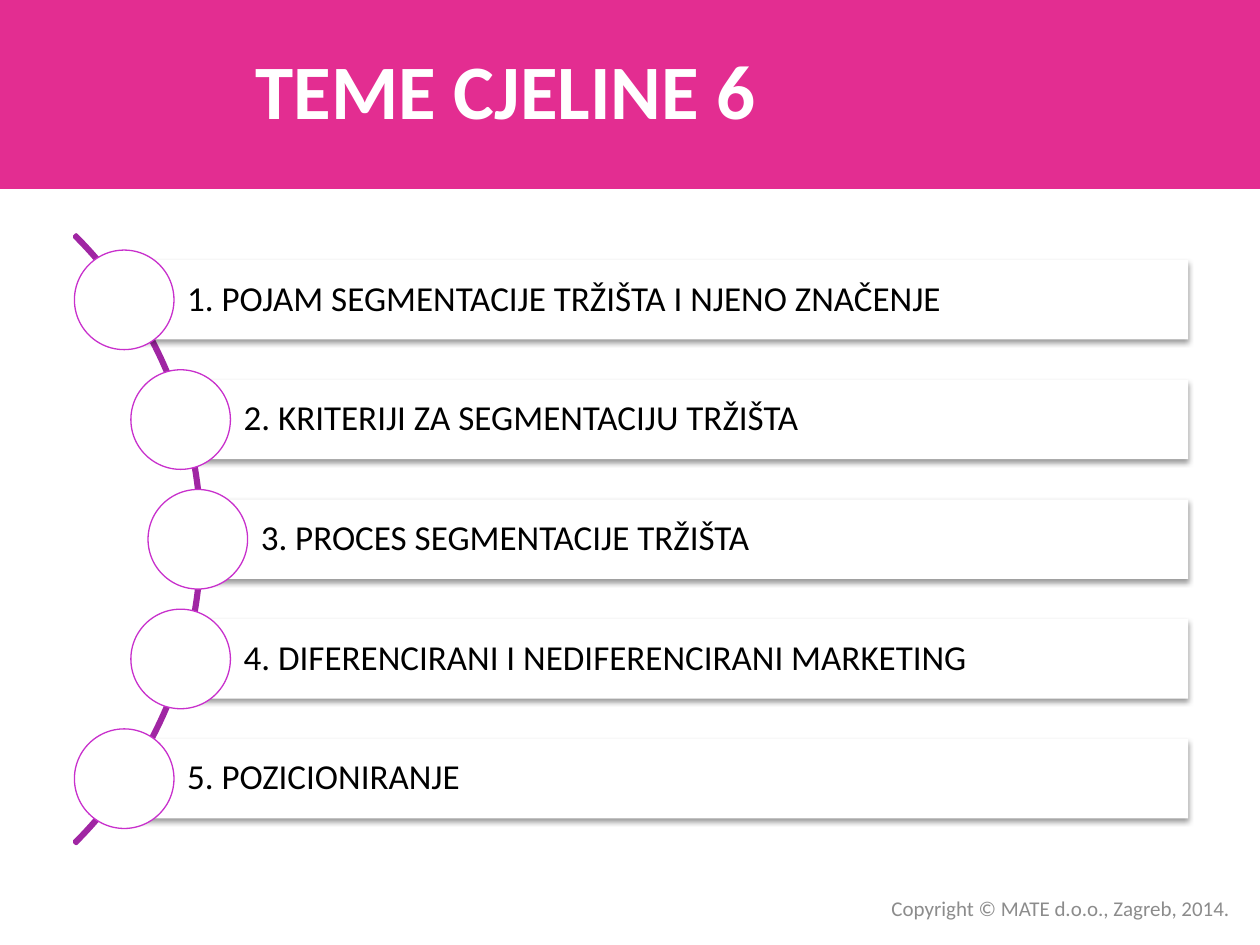
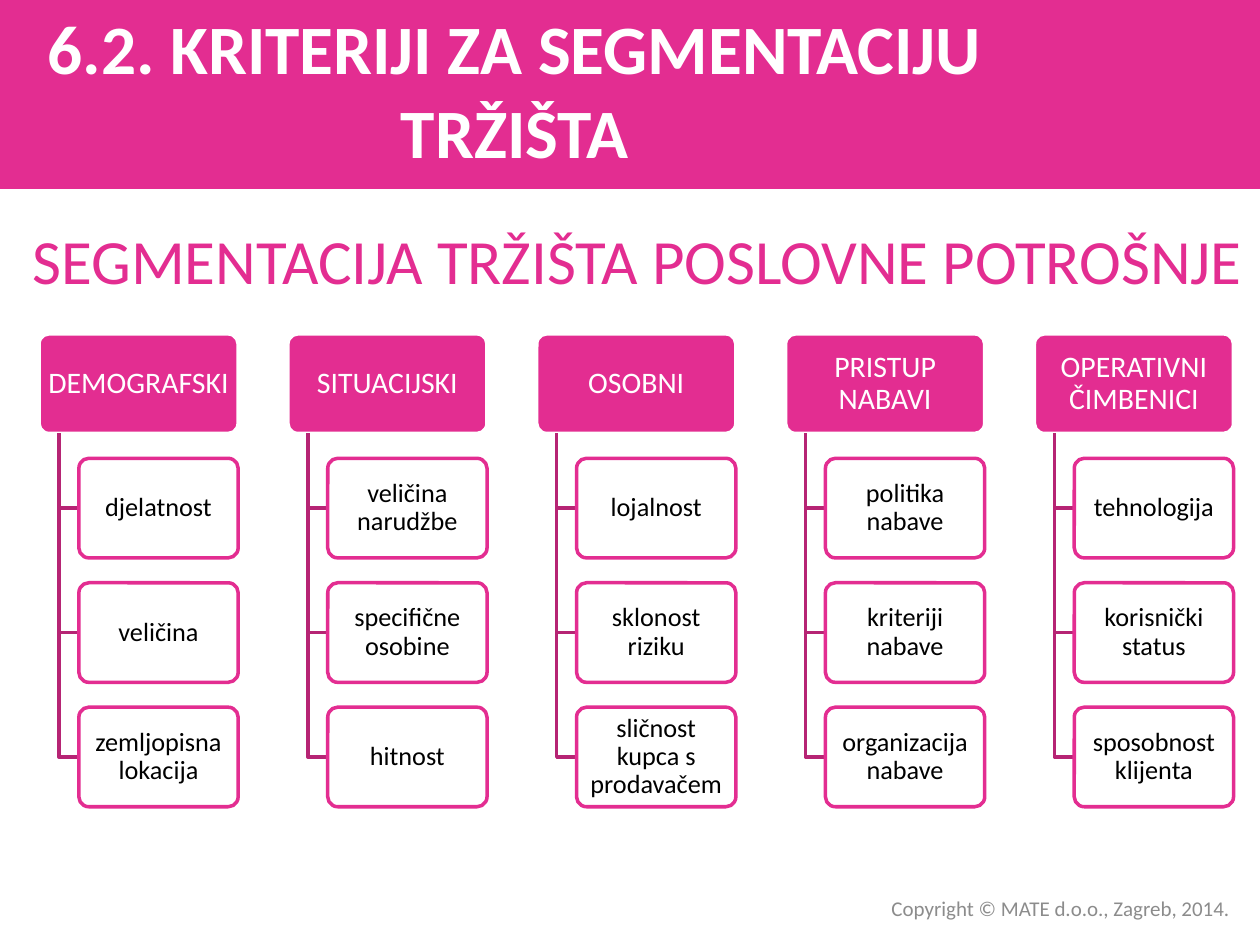
from dataclasses import dataclass
from math import sqrt

from lxml.etree import SubElement
from pptx import Presentation
from pptx.dml.color import RGBColor
from pptx.enum.shapes import MSO_SHAPE as Shape
from pptx.enum.text import MSO_ANCHOR as Anchor, MSO_AUTO_SIZE as AutoSize, PP_ALIGN as Align
from pptx.oxml.ns import qn
from pptx.util import Inches, Pt


@dataclass(frozen=True)
class Theme:
    font: str = "Calibri"
    pink: str = "E32D91"
    dark_pink: str = "B62474"
    purple: str = "A026A3"
    light_purple: str = "C830CC"
    white: str = "FFFFFF"
    black: str = "000000"
    grey: str = "8C8C8C"
    title: float = 44
    long_title: float = 39.6
    subtitle: float = 36
    topic: float = 20
    criterion: float = 17
    example: float = 15
    footer: float = 12


theme = Theme()
WIDTH, HEIGHT = 10, 7.5


def write(shape, text, size, color=theme.black, bold=False, align=Align.CENTER,
          spacing=None, insets=(0.1, 0.05, 0.1, 0.05), wrap=True):
    """Fill a shape with one formatted paragraph; insets are left, top, right, bottom."""
    frame = shape.text_frame
    frame.auto_size = AutoSize.NONE
    frame.word_wrap = wrap
    frame.vertical_anchor = Anchor.MIDDLE
    (frame.margin_left, frame.margin_top,
     frame.margin_right, frame.margin_bottom) = map(Inches, insets)
    paragraph = frame.paragraphs[0]
    paragraph.alignment = align
    paragraph.line_spacing = spacing
    run = paragraph.add_run()
    run.text = text
    run.font.name, run.font.size, run.font.bold = theme.font, Pt(size), bold
    run.font.color.rgb = RGBColor.from_string(color)


def paint(shape, fill=None, line=None, weight=2):
    """Set fill and outline, either of which may be absent, and drop the shadow."""
    shape.shadow.inherit = False
    for part, color in ((shape.fill, fill), (shape.line.fill, line)):
        if color:
            part.solid()
            part.fore_color.rgb = RGBColor.from_string(color)
        else:
            part.background()
    if line:
        shape.line.width = Pt(weight)
    return shape


deck = Presentation()
deck.slide_width, deck.slide_height = Inches(WIDTH), Inches(HEIGHT)
layout = deck.slide_layouts.get_by_name("Title Only")

# Shared title and footer
slides = []
for heading, size in (("TEME CJELINE 6 ", theme.title),
                      ("6.2. KRITERIJI ZA SEGMENTACIJU TRŽIŠTA", theme.long_title)):
    slide = deck.slides.add_slide(layout)
    title = slide.shapes.title
    title.left, title.top, title.width, title.height = map(Inches, (0, 0.08, 8.17, 1.25))
    write(title, heading, size, color=theme.white, bold=True)
    footer = slide.shapes.add_textbox(*map(Inches, (4.69, 7.06, 5.17, 0.3)))
    write(footer, "Copyright © MATE d.o.o., Zagreb, 2014.", theme.footer,
          color=theme.grey, align=Align.RIGHT)
    slides.append(slide)
topics_slide, criteria_slide = slides

# The band belongs to the layout, behind its placeholders
band = paint(topics_slide.shapes.add_shape(
    Shape.RECTANGLE, 0, 0, Inches(WIDTH), Inches(HEIGHT / 5)), fill=theme.pink)
layout.shapes.element.insert(2, band.element)

# Topics: bullets sit on an arc, bars run from their centres to a common right edge
topics = (
    "1. POJAM SEGMENTACIJE TRŽIŠTA I NJENO ZNAČENJE",
    "2. KRITERIJI ZA SEGMENTACIJU TRŽIŠTA",
    "3. PROCES SEGMENTACIJE TRŽIŠTA",
    "4. DIFERENCIRANI I NEDIFERENCIRANI MARKETING",
    "5. POZICIONIRANJE",
)
ARC_SIZE, ARC_X, ARC_Y, ORBIT = 6.83, -1.81, 4.28, 3.38
ROW, BAR, BULLET, BAR_RIGHT = 0.95, 0.63, 0.79, 9.43

arc = paint(topics_slide.shapes.add_shape(
    Shape.BLOCK_ARC, Inches(ARC_X - ARC_SIZE / 2), Inches(ARC_Y - ARC_SIZE / 2),
    Inches(ARC_SIZE), Inches(ARC_SIZE)), line=theme.purple)
arc.adjustments[0], arc.adjustments[1], arc.adjustments[2] = 189, 27, 0.003

for row, topic in enumerate(topics):
    offset = (row - len(topics) // 2) * ROW
    x, y = ARC_X + sqrt(ORBIT ** 2 - offset ** 2), ARC_Y + offset
    bar = paint(topics_slide.shapes.add_shape(
        Shape.RECTANGLE, Inches(x), Inches(y - BAR / 2),
        Inches(BAR_RIGHT - x), Inches(BAR)), fill=theme.white)
    effects = bar.element.spPr.find(qn("a:effectLst"))
    shadow = SubElement(effects, qn("a:outerShdw"), blurRad="40000", dist="20000",
                        dir="5400000", rotWithShape="0")
    shade = SubElement(shadow, qn("a:srgbClr"), val=theme.black)
    SubElement(shade, qn("a:alpha"), val="38000")
    write(bar, topic, theme.topic, align=Align.LEFT, spacing=0.9,
          insets=(0.5, 0.06, 0.06, 0.06))
    paint(topics_slide.shapes.add_shape(
        Shape.OVAL, Inches(x - BULLET / 2), Inches(y - BULLET / 2),
        Inches(BULLET), Inches(BULLET)),
        fill=theme.white, line=theme.light_purple, weight=0.75)

# Criteria: every length is a share of the heading box's width
criteria = {
    "DEMOGRAFSKI": ("djelatnost", "veličina", "zemljopisna lokacija"),
    "SITUACIJSKI": ("veličina narudžbe", "specifične osobine", "hitnost"),
    "OSOBNI": ("lojalnost", "sklonost riziku", "sličnost kupca s prodavačem"),
    "PRISTUP NABAVI": ("politika nabave", "kriteriji nabave", "organizacija nabave"),
    "OPERATIVNI ČIMBENICI": ("tehnologija", "korisnički status", "sposobnost klijenta"),
}
LEFT, TOP, BOX = 0.31, 2.65, 1.58
BOX_HEIGHT, COLUMN_STEP, ROW_STEP = BOX / 2, BOX * 5 / 4, BOX * 5 / 8

for column, (criterion, examples) in enumerate(criteria.items()):
    x = LEFT + column * COLUMN_STEP
    stem, indent = x + BOX / 10, x + BOX / 5
    head = paint(criteria_slide.shapes.add_shape(
        Shape.ROUNDED_RECTANGLE, Inches(x), Inches(TOP), Inches(BOX), Inches(BOX_HEIGHT)),
        fill=theme.pink, line=theme.white)
    head.adjustments[0] = 0.1
    write(head, criterion, theme.criterion, color=theme.white, spacing=0.9,
          insets=(0.04, 0.02, 0.04, 0.02))
    for row, example in enumerate(examples, start=1):
        y = TOP + row * ROW_STEP
        middle = Inches(y + BOX_HEIGHT / 2)
        elbow = criteria_slide.shapes.build_freeform(Inches(stem), Inches(TOP + BOX_HEIGHT))
        elbow.add_line_segments([(Inches(stem), middle), (Inches(indent), middle)], close=False)
        paint(elbow.convert_to_shape(), line=theme.dark_pink)
        leaf = paint(criteria_slide.shapes.add_shape(
            Shape.ROUNDED_RECTANGLE, Inches(indent), Inches(y),
            Inches(BOX * 4 / 5), Inches(BOX_HEIGHT)), fill=theme.white, line=theme.pink)
        leaf.adjustments[0] = 0.1
        write(leaf, example, theme.example, spacing=0.9, insets=(0.03, 0.02, 0.03, 0.02))

subtitle = criteria_slide.shapes.add_textbox(*map(Inches, (0.11, 1.7, 9.9, 0.71)))
write(subtitle, "SEGMENTACIJA TRŽIŠTA POSLOVNE POTROŠNJE", theme.subtitle,
      color=theme.pink, wrap=False)

deck.save("out.pptx")
